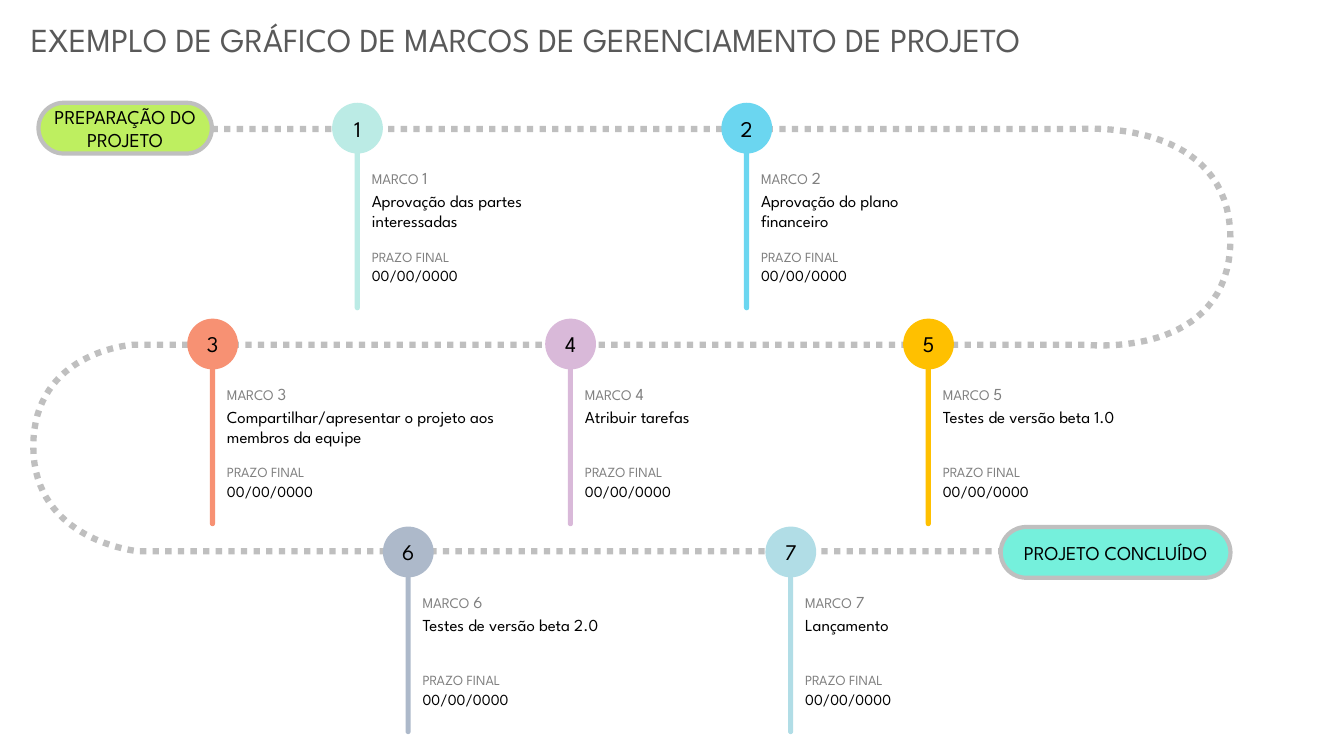
from dataclasses import dataclass

from lxml.etree import SubElement
from pptx import Presentation
from pptx.dml.color import RGBColor
from pptx.enum.dml import MSO_LINE
from pptx.enum.shapes import MSO_SHAPE
from pptx.enum.text import MSO_ANCHOR, MSO_AUTO_SIZE, PP_ALIGN
from pptx.oxml.ns import qn
from pptx.shapes.autoshape import Shape
from pptx.shapes.shapetree import GroupShapes, SlideShapes
from pptx.text.text import TextFrame, _Paragraph
from pptx.util import Cm, Pt

FONT = "League Spartan"
BLACK = RGBColor(0x00, 0x00, 0x00)
HEADING_GRAY = RGBColor(0x59, 0x59, 0x59)
LABEL_GRAY = RGBColor(0x80, 0x80, 0x80)
ROUTE_GRAY = RGBColor(0xBF, 0xBF, 0xBF)
LIME = RGBColor(0xBE, 0xEF, 0x60)
TURQUOISE = RGBColor(0x75, 0xF0, 0xDC)
MINT = RGBColor(0xBB, 0xEB, 0xE5)
SKY = RGBColor(0x6B, 0xD6, 0xF0)
CORAL = RGBColor(0xF7, 0x91, 0x73)
LILAC = RGBColor(0xD9, 0xB9, 0xD9)
AMBER = RGBColor(0xFF, 0xC0, 0x00)
SLATE = RGBColor(0xAD, 0xB9, 0xCA)
ICE = RGBColor(0xB1, 0xDD, 0xE6)

# Lengths in centimetres
ROW_TOPS = (2.59, 8.03, 13.27)
MARKER_SIZE = 1.28
CURVE_STEPS = 32

Point = tuple[float, float]
Box = tuple[float, float, float, float]
Shapes = SlideShapes | GroupShapes


@dataclass(frozen=True)
class Milestone:
    left: float
    row: int
    color: RGBColor
    task: str
    task_width: float


@dataclass(frozen=True)
class Endpoint:
    label: str
    box: Box
    color: RGBColor


MILESTONES = (
    Milestone(8.37, 0, MINT, "Aprovação das partes interessadas", 5.74),
    Milestone(18.18, 0, SKY, "Aprovação do plano financeiro", 3.48),
    Milestone(4.72, 1, CORAL, "Compartilhar/apresentar o projeto aos membros da equipe", 7.21),
    Milestone(13.74, 1, LILAC, "Atribuir tarefas", 3.48),
    Milestone(22.76, 1, AMBER, "Testes de versão beta 1.0", 6.3),
    Milestone(9.65, 2, SLATE, "Testes de versão beta 2.0", 5.94),
    Milestone(19.29, 2, ICE, "Lançamento", 3.48),
)
ENDPOINTS = (
    Endpoint("PREPARAÇÃO DO PROJETO", (0.97, 2.59, 4.37, 1.28), LIME),
    Endpoint("PROJETO CONCLUÍDO", (25.22, 13.28, 5.79, 1.28), TURQUOISE),
)


def style(paragraph: _Paragraph, color: RGBColor, size: float | None = None) -> None:
    paragraph.font.name = FONT
    paragraph.font.color.rgb = color
    if size is not None:
        paragraph.font.size = Pt(size)


def clear_margins(frame: TextFrame) -> None:
    frame.margin_left = frame.margin_right = 0
    frame.margin_top = frame.margin_bottom = 0


def add_text(shapes: Shapes, box: Box, text: str, size: float | None,
             color: RGBColor) -> TextFrame:
    frame = shapes.add_textbox(*map(Cm, box)).text_frame
    frame.word_wrap = True
    frame.text = text
    style(frame.paragraphs[0], color, size)
    return frame


def add_filled(shapes: Shapes, kind: MSO_SHAPE, box: Box, color: RGBColor) -> Shape:
    shape = shapes.add_shape(kind, *map(Cm, box))
    shape.shadow.inherit = False
    shape.fill.solid()
    shape.fill.fore_color.rgb = color
    shape.line.fill.background()
    if kind == MSO_SHAPE.ROUNDED_RECTANGLE:
        shape.adjustments[0] = 0.5
    return shape


def center_text(shape: Shape, text: str, size: float) -> None:
    frame = shape.text_frame
    clear_margins(frame)
    frame.word_wrap = True
    frame.vertical_anchor = MSO_ANCHOR.MIDDLE
    frame.text = text
    frame.paragraphs[0].alignment = PP_ALIGN.CENTER
    style(frame.paragraphs[0], BLACK, size)


def curve(start: Point, control_a: Point, control_b: Point, end: Point) -> list[Point]:
    """Points along a cubic curve, without its start."""
    points = []
    for step in range(1, CURVE_STEPS + 1):
        t = step / CURVE_STEPS
        weights = ((1 - t) ** 3, 3 * t * (1 - t) ** 2, 3 * t**2 * (1 - t), t**3)
        corners = (start, control_a, control_b, end)
        x, y = (sum(w * c[axis] for w, c in zip(weights, corners)) for axis in (0, 1))
        points.append((x, y))
    return points


def add_route(shapes: SlideShapes) -> None:
    right_start, right_mid, right_end = (27.25, 3.25), (31.01, 6.02), (27.38, 8.69)
    left_start, left_mid, left_end = (3.33, 8.69), (0.84, 11.25), (3.48, 13.89)
    points = [
        right_start,
        *curve(right_start, right_start, (31.01, 2.97), right_mid),
        *curve(right_mid, (31.01, 9.07), right_end, right_end),
        left_start,
        *curve(left_start, left_start, (0.84, 8.86), left_mid),
        *curve(left_mid, (0.84, 13.64), left_end, left_end),
        (26.11, 13.89),
    ]
    builder = shapes.build_freeform(Cm(5.33), Cm(3.25))
    builder.add_line_segments([(Cm(x), Cm(y)) for x, y in points], close=False)
    route = builder.convert_to_shape()
    route.shadow.inherit = False
    route.fill.background()
    route.line.color.rgb = ROUTE_GRAY
    route.line.width = Pt(4.5)
    route.line.dash_style = MSO_LINE.ROUND_DOT
    SubElement(route.line._get_or_add_ln(), qn("a:round"))


def add_milestone(shapes: SlideShapes, number: int, milestone: Milestone) -> None:
    group = shapes.add_group_shape().shapes
    left, top = milestone.left, ROW_TOPS[milestone.row]
    text_left = left + 1

    # Stem
    add_filled(group, MSO_SHAPE.ROUNDED_RECTANGLE,
               (left + 0.57, top + 0.48, 0.13, 4.75), milestone.color)

    # Number label, with a larger digit
    label = add_text(group, (text_left, top + 1.63, 2.97, 0.66), "", None, LABEL_GRAY)
    clear_margins(label)
    for text, size in (("MARCO", 10.5), (" ", 11), (str(number), 12)):
        run = label.paragraphs[0].add_run()
        run.text = text
        run.font.size = Pt(size)

    # Task and deadline
    for text, offset, width, height, size, color in (
        (milestone.task, 2.22, milestone.task_width, 1.45, 12, BLACK),
        ("PRAZO FINAL", 3.66, 3.6, 0.51, 10, LABEL_GRAY),
        ("00/00/0000", 4.12, 2.29, 0.66, 11, BLACK),
    ):
        clear_margins(add_text(group, (text_left, top + offset, width, height),
                               text, size, color))

    # Numbered marker
    marker = add_filled(group, MSO_SHAPE.OVAL,
                        (left, top, MARKER_SIZE, MARKER_SIZE), milestone.color)
    center_text(marker, str(number), 16)


def add_endpoint(shapes: SlideShapes, endpoint: Endpoint) -> None:
    pill = add_filled(shapes, MSO_SHAPE.ROUNDED_RECTANGLE, endpoint.box, endpoint.color)
    pill.line.color.rgb = ROUTE_GRAY
    pill.line.width = Pt(3)
    center_text(pill, endpoint.label, 14)


def main() -> None:
    presentation = Presentation()
    presentation.slide_width, presentation.slide_height = Cm(33.87), Cm(19.05)
    shapes = presentation.slides.add_slide(presentation.slide_layouts[6]).shapes

    heading = add_text(shapes, (0.53, 0.36, 31.39, 1.28),
                       "EXEMPLO DE GRÁFICO DE MARCOS DE GERENCIAMENTO DE PROJETO",
                       24, HEADING_GRAY)
    heading.auto_size = MSO_AUTO_SIZE.SHAPE_TO_FIT_TEXT

    add_route(shapes)
    preparation, completion = ENDPOINTS
    add_endpoint(shapes, preparation)
    for number, milestone in enumerate(MILESTONES, start=1):
        add_milestone(shapes, number, milestone)
    add_endpoint(shapes, completion)
    presentation.save("out.pptx")


if __name__ == "__main__":
    main()
